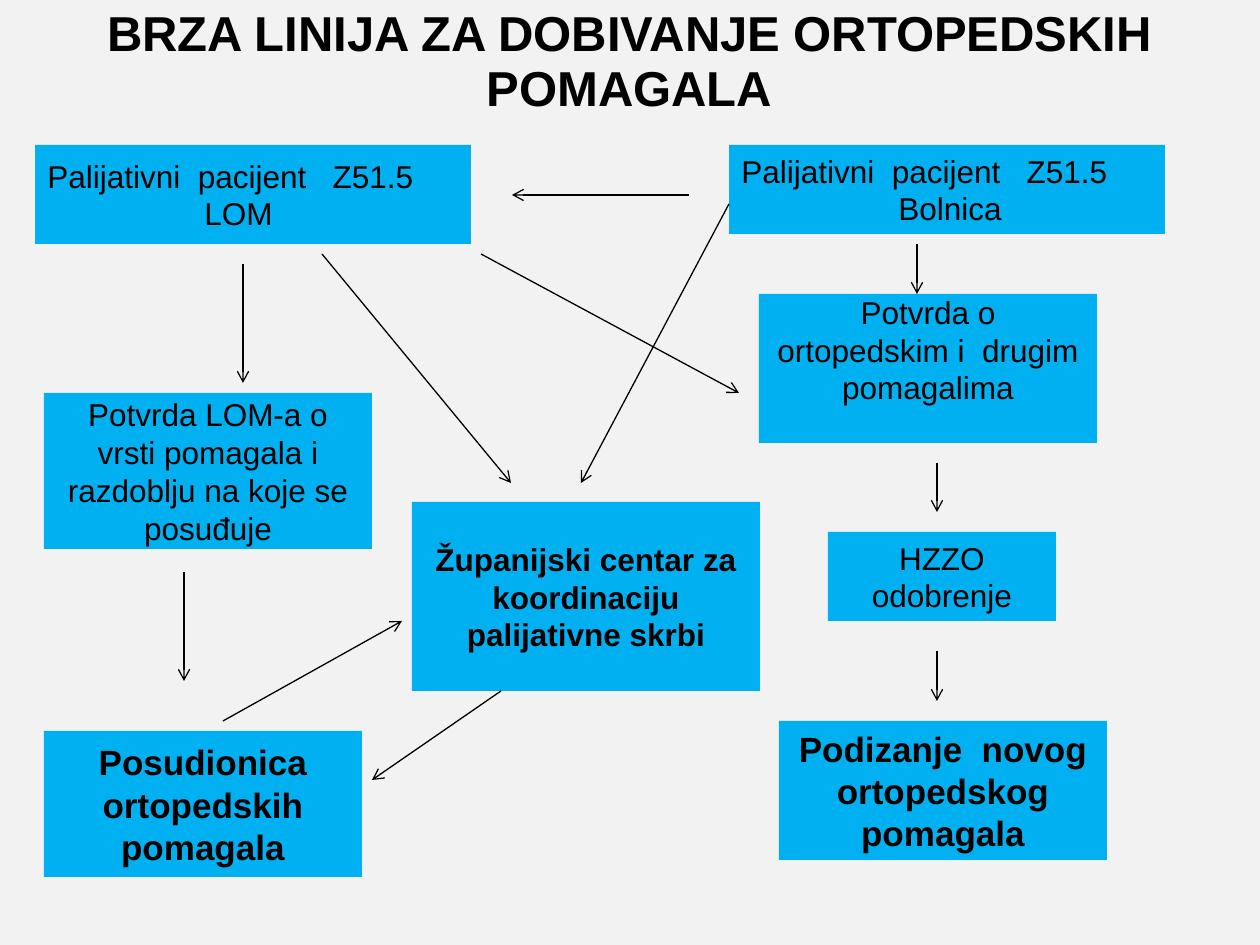
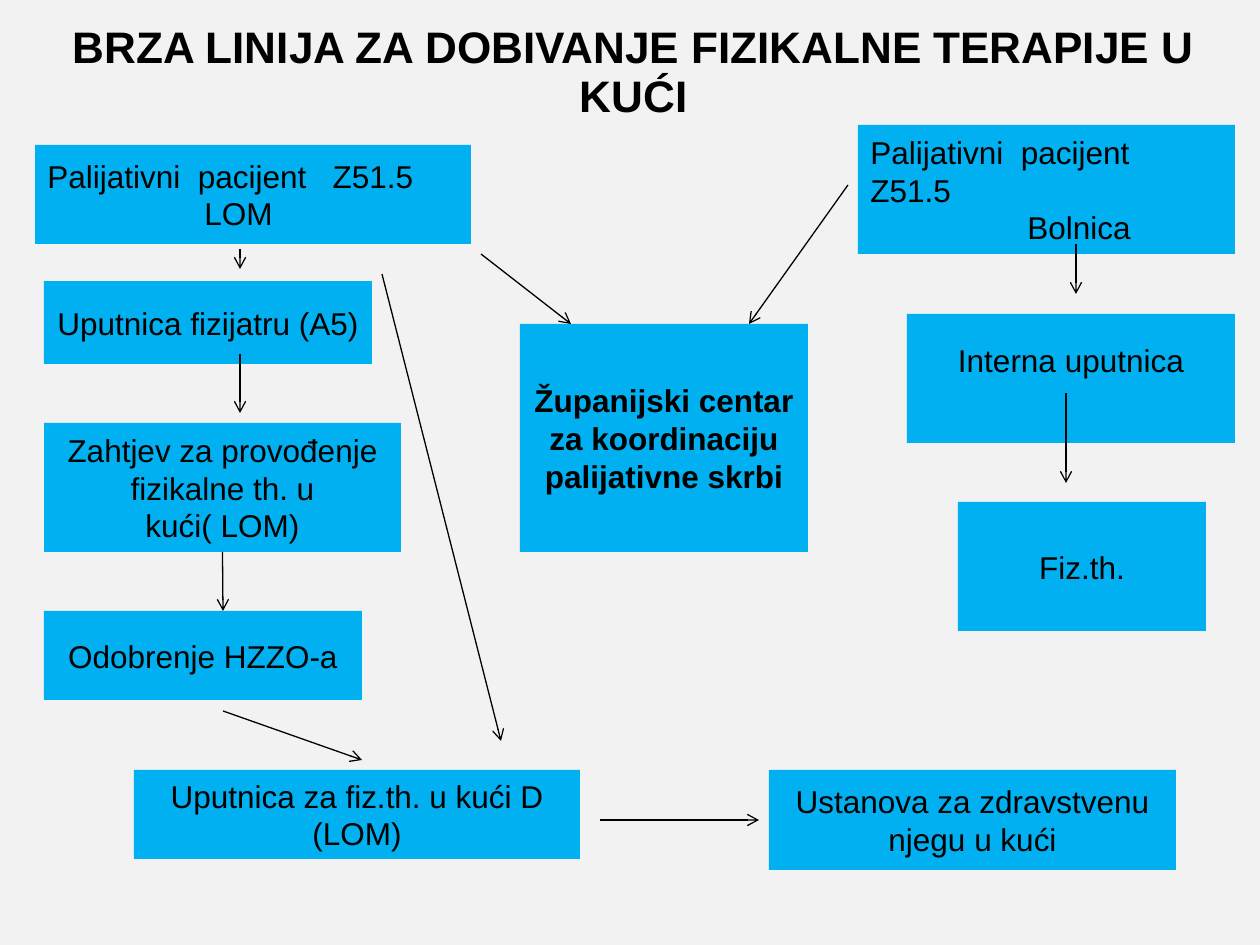
from lxml import etree
from pptx import Presentation
from pptx.dml.color import RGBColor
from pptx.enum.shapes import MSO_CONNECTOR, MSO_SHAPE
from pptx.enum.text import MSO_ANCHOR, MSO_AUTO_SIZE, PP_ALIGN
from pptx.oxml.ns import qn
from pptx.util import Emu, Pt

RECT = MSO_SHAPE.RECTANGLE
STRAIGHT = MSO_CONNECTOR.STRAIGHT
MIDDLE = MSO_ANCHOR.MIDDLE
NO_AUTOFIT = MSO_AUTO_SIZE.NONE
LEFT, CENTER = PP_ALIGN.LEFT, PP_ALIGN.CENTER

PX_PER_INCH = 126
FONT = "Arial"
BLACK = "000000"
BLUE = "00B0F0"
GREY = "F2F2F2"
TITLE_ONLY = 5
BOTTOM = 2
RAISED_INSET = 44
SOURCE_INDENT = 157
PATIENT = "Palijativni  pacijent   Z51.5"
CENTRE = "Županijski centar za koordinaciju palijativne skrbi"


def px(n):
    return Emu(round(n * 914400 / PX_PER_INCH))


def color(value):
    return RGBColor.from_string(value)


def format_text(tf, size, bold, align):
    for p in tf.paragraphs:
        p.alignment = align
        for r in p.runs:
            r.font.name = FONT
            r.font.size = Pt(size)
            r.font.bold = bold
            r.font.color.rgb = color(BLACK)


def add_title_slide(prs, text, x, y, w, h, size):
    slide = prs.slides.add_slide(prs.slide_layouts[TITLE_ONLY])
    title = slide.shapes.title
    title.left, title.top, title.width, title.height = map(px, (x, y, w, h))
    tf = title.text_frame
    tf.text = text
    tf.word_wrap = True
    tf.auto_size = NO_AUTOFIT
    tf.vertical_anchor = MIDDLE
    tf.margin_left = tf.margin_right = tf.margin_top = tf.margin_bottom = 0
    tf.paragraphs[0].line_spacing = 0.93
    format_text(tf, size, True, CENTER)
    return slide


def add_box(slide, x, y, w, h, text, size=18, bold=False, align=CENTER, raised=False):
    sp = slide.shapes.add_shape(RECT, px(x), px(y), px(w), px(h))
    sp.shadow.inherit = False
    sp.fill.solid()
    sp.fill.fore_color.rgb = color(BLUE)
    sp.line.fill.background()
    tf = sp.text_frame
    tf.text = text
    tf.word_wrap = True
    tf.vertical_anchor = MIDDLE
    if raised:
        tf.margin_bottom = px(RAISED_INSET)
    format_text(tf, size, bold, align)
    return sp


def add_patient_box(slide, x, y, w, h, source):
    sp = add_box(slide, x, y, w, h, f"{PATIENT}\n{source}", align=LEFT)
    pPr = sp.text_frame.paragraphs[1]._p.get_or_add_pPr()
    pPr.set("marL", str(px(SOURCE_INDENT)))


def add_arrow(slide, x1, y1, x2, y2):
    line = slide.shapes.add_connector(STRAIGHT, px(x1), px(y1), px(x2), px(y2))
    line.line.color.rgb = color(BLACK)
    line.line.width = Pt(0.75)
    etree.SubElement(line.line._get_or_add_ln(), qn("a:tailEnd"), type="arrow")
    etree.SubElement(line._element.spPr, qn("a:effectLst"))
    return line


def add_arrows(slide, arrows):
    for ends in arrows:
        add_arrow(slide, *ends)


def build_orthopedic_aids(prs):
    slide = add_title_slide(
        prs, "BRZA LINIJA ZA DOBIVANJE ORTOPEDSKIH POMAGALA", 65, 0, 1129, 125, 28)
    add_patient_box(slide, 35, 145, 436, 99, "LOM")
    add_patient_box(slide, 729, 145, 436, 89, "Bolnica")
    add_box(slide, 759, 294, 338, 149, "Potvrda o ortopedskim i  drugim pomagalima", raised=True)
    add_box(slide, 828, 532, 228, 89, "HZZO odobrenje")
    add_box(slide, 779, 721, 328, 139, "Podizanje  novog ortopedskog pomagala", 20, True)
    add_box(slide, 44, 393, 328, 156,
            "Potvrda LOM-a o vrsti pomagala i razdoblju na koje se posuđuje")
    add_box(slide, 44, 731, 318, 146, "Posudionica ortopedskih pomagala", 20, True)
    add_box(slide, 412, 502, 348, 189, CENTRE, bold=True)
    add_arrows(slide, [
        (689, 195, 512, 195),
        (917, 244, 917, 294),
        (729, 204, 581, 483),
        (243, 264, 243, 383),
        (937, 463, 937, 512),
        (937, 651, 937, 701),
        (184, 572, 184, 681),
        (223, 721, 402, 621),
        (322, 254, 511, 483),
        (481, 254, 739, 393),
        (501, 691, 372, 780),
    ])


def build_home_therapy(prs):
    slide = add_title_slide(
        prs, "BRZA LINIJA ZA DOBIVANJE FIZIKALNE TERAPIJE U KUĆI", 68, 21, 1131, 105, 25.2)
    add_patient_box(slide, 35, 145, 436, 99, "LOM")
    add_patient_box(slide, 858, 125, 377, 129, "Bolnica")
    add_box(slide, 907, 314, 328, 129, "Interna uputnica", raised=True)
    add_box(slide, 958, 502, 248, 129, "Fiz.th.")
    add_box(slide, 44, 281, 328, 83, "Uputnica fizijatru (A5)")
    add_box(slide, 44, 611, 318, 89, "Odobrenje HZZO-a")
    add_box(slide, 520, 324, 288, 228, CENTRE, bold=True)
    request = add_box(slide, 44, 423, 357, 129,
                      "Zahtjev za provođenje fizikalne th. u kući( LOM)")
    add_box(slide, 134, 770, 446, 89, "Uputnica za fiz.th. u kući D (LOM)")
    add_box(slide, 769, 770, 407, 100, "Ustanova za zdravstvenu njegu u kući")
    add_arrow(slide, 223, 552, 223, 611).begin_connect(request, BOTTOM)
    add_arrows(slide, [
        (1076, 244, 1076, 294),
        (848, 185, 749, 324),
        (240, 249, 240, 269),
        (1066, 393, 1066, 483),
        (240, 354, 240, 413),
        (481, 254, 571, 324),
        (382, 274, 501, 741),
        (223, 711, 362, 760),
        (600, 820, 759, 820),
    ])


def main():
    prs = Presentation()
    prs.slide_width, prs.slide_height = px(1260), px(945)
    fill = prs.slide_master.background.fill
    fill.solid()
    fill.fore_color.rgb = color(GREY)
    build_orthopedic_aids(prs)
    build_home_therapy(prs)
    prs.save("out.pptx")


if __name__ == "__main__":
    main()
